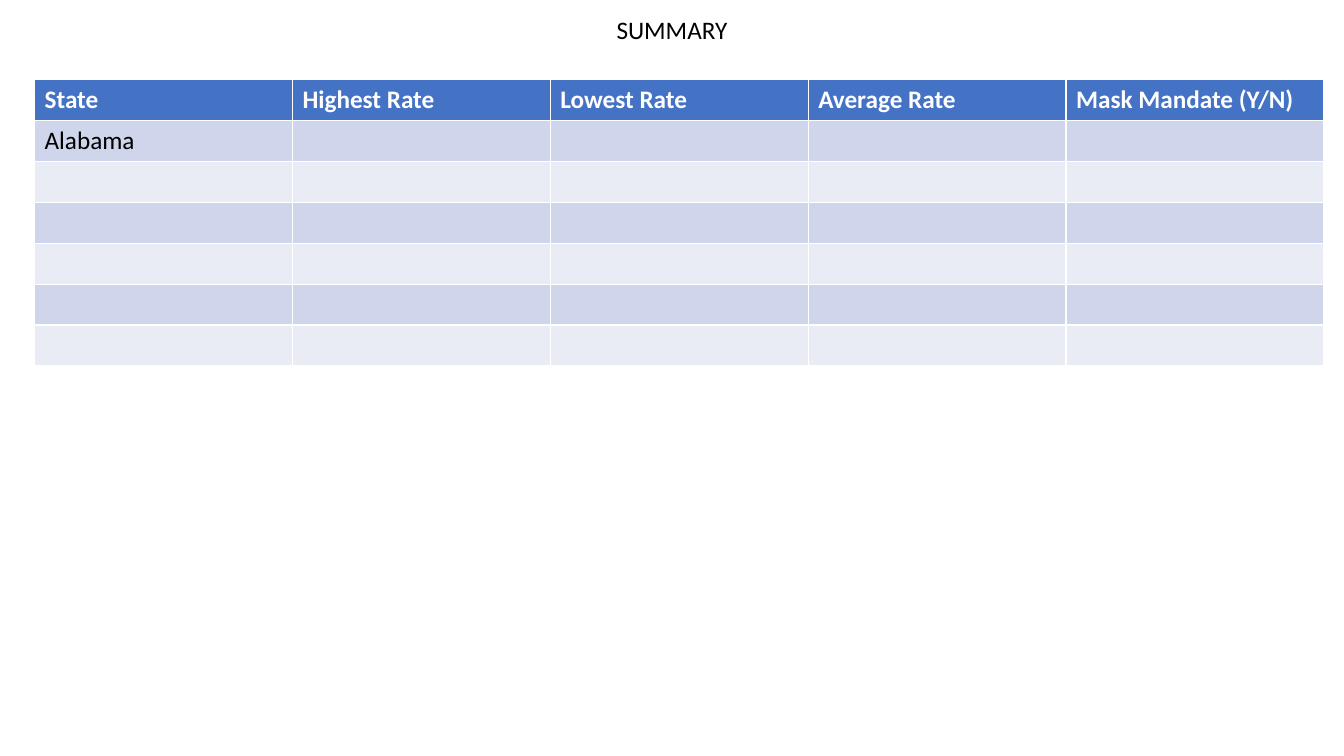
from dataclasses import dataclass

from pptx import Presentation
from pptx.dml.color import RGBColor
from pptx.enum.text import MSO_ANCHOR, MSO_AUTO_SIZE, PP_ALIGN
from pptx.util import Pt


@dataclass(frozen=True)
class Theme:
    font: str = "Calibri"
    size: float = 18
    ink: str = "000000"
    paper: str = "FFFFFF"
    header: str = "4472C4"
    bands: tuple = ("CFD5EA", "E9EBF5")


class SlideBuilder:
    def __init__(self, page, theme):
        self.page = page
        self.theme = theme

    def add_text(self, para, text, color, bold=False):
        span = para.add_run()
        span.text = text
        style = {"name": self.theme.font, "size": Pt(self.theme.size), "bold": bold}
        for name, value in style.items():
            setattr(span.font, name, value)
        span.font.color.rgb = RGBColor.from_string(color)

    def title(self, text, left, top, width, height):
        box = self.page.shapes.title
        place = {"left": left, "top": top, "width": width, "height": height}
        for name, value in place.items():
            setattr(box, name, Pt(value))
        frame = box.text_frame
        layout = {
            "word_wrap": True,
            "auto_size": MSO_AUTO_SIZE.SHAPE_TO_FIT_TEXT,
            "vertical_anchor": MSO_ANCHOR.TOP,
        }
        for name, value in layout.items():
            setattr(frame, name, value)
        para = frame.paragraphs[0]
        para.alignment = PP_ALIGN.CENTER
        self.add_text(para, text, self.theme.ink)

    def table(self, rows, left, top, column_width, row_height):
        row_count, column_count = len(rows), len(rows[0])
        table = self.page.shapes.add_table(
            row_count, column_count, Pt(left), Pt(top),
            Pt(column_width * column_count), Pt(row_height * row_count),
        ).table
        for row_index, texts in enumerate(rows):
            is_header = row_index == 0
            fill = self.theme.header if is_header else self.theme.bands[(row_index - 1) % 2]
            color = self.theme.paper if is_header else self.theme.ink
            for column_index, text in enumerate(texts):
                cell = table.cell(row_index, column_index)
                cell.fill.solid()
                cell.fill.fore_color.rgb = RGBColor.from_string(fill)
                if text:
                    self.add_text(cell.text_frame.paragraphs[0], text, color, is_header)


def main():
    deck = Presentation()
    deck.slide_width, deck.slide_height = Pt(960), Pt(540)
    page = deck.slides.add_slide(deck.slide_layouts.get_by_name("Title Only"))
    builder = SlideBuilder(page, Theme())
    builder.title("SUMMARY", 0, 6.5, 960, 29)

    headings = ["State", "Highest Rate", "Lowest Rate", "Average Rate", "Mask Mandate (Y/N)"]
    states = ["Alabama"] + [""] * 5
    blanks = [""] * (len(headings) - 1)
    rows = [headings] + [[state] + blanks for state in states]
    builder.table(rows, 24.7, 57, 184.2, 29.2)
    deck.save("out.pptx")


if __name__ == "__main__":
    main()
